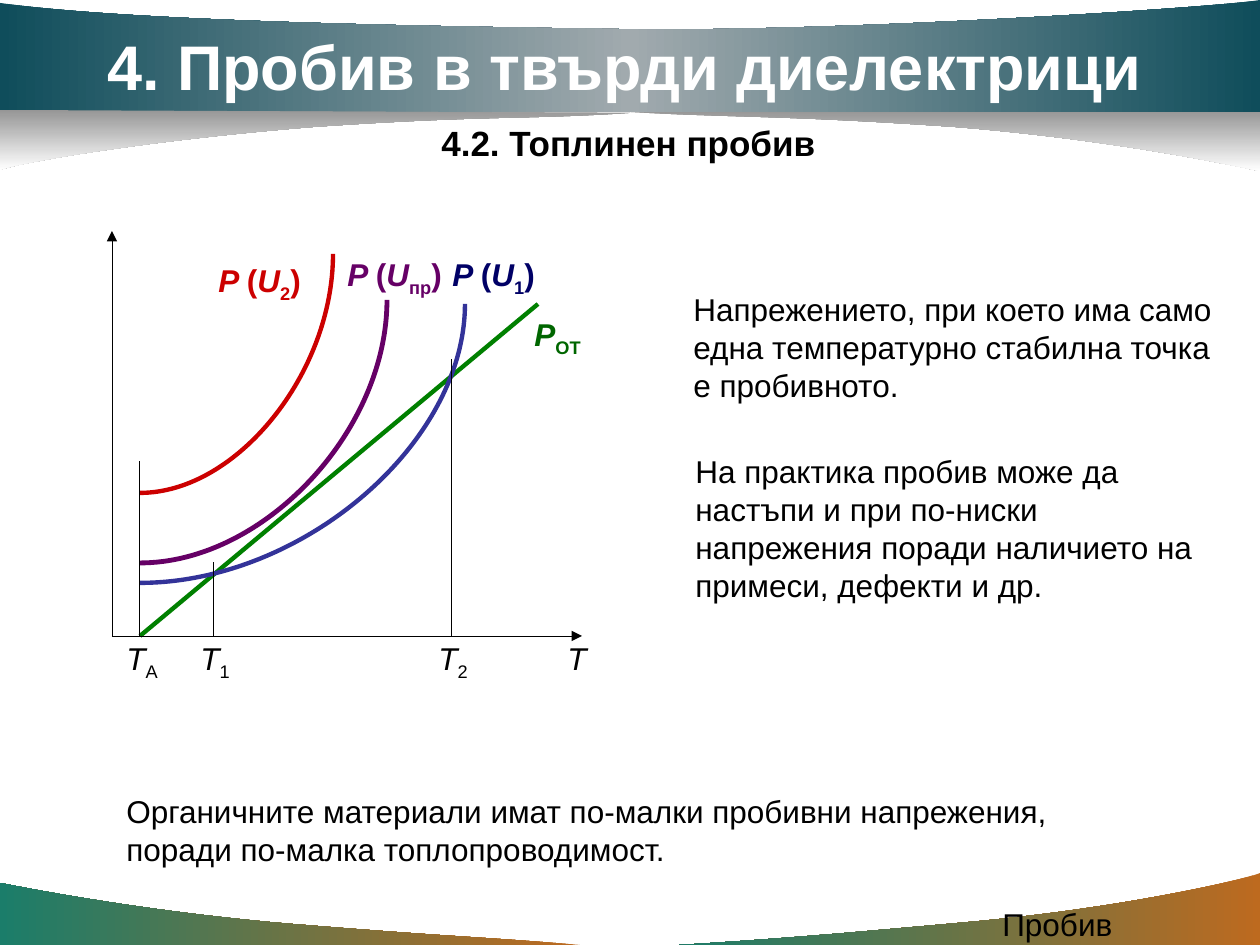
from dataclasses import dataclass

from pptx import Presentation
from pptx.dml.color import RGBColor
from pptx.enum.shapes import MSO_CONNECTOR as Link
from pptx.oxml.ns import qn
from pptx.oxml.xmlchemy import OxmlElement as Element
from pptx.util import Pt

EMU_PER_PX = 914400 / 126


@dataclass(frozen=True)
class Theme:
    font: str = "Arial"
    title_size: int = 36
    subtitle_size: int = 20
    body_size: int = 18
    thick: float = 2.5
    white: str = "FFFFFF"
    black: str = "000000"
    loss_line: str = "008000"
    loss_label: str = "006600"
    red: str = "CC0000"
    purple: str = "660066"
    blue_curve: str = "333399"
    blue_label: str = "000066"
    footer: tuple = ((0, "BD6A1F"), (100, "1B7D6A"))
    shade: tuple = ((0, "969696"), (100, "FFFFFF"))
    header: tuple = ((0, "0F4D5B"), (50, "A1AAAE"), (100, "0F4D5B"))


def px(length):
    return round(length * EMU_PER_PX)


def add_child(parent, tag, **attributes):
    child = Element(tag)
    for name, value in attributes.items():
        child.set(name, str(value))
    parent.append(child)
    return child


class SlideBuilder:
    def __init__(self, slide, theme):
        self.slide, self.theme = slide, theme

    def band(self, start, steps, stops, angle):
        """Filled outline: a pair is a straight step, six numbers are a curve."""
        corners = [start] + [step[-2:] for step in steps]
        outline = self.slide.shapes.build_freeform(*start, scale=EMU_PER_PX)
        outline.add_line_segments(corners[1:], close=True)
        shape = outline.convert_to_shape()
        shape.shadow.inherit = False
        shape.line.fill.background()
        properties = shape._element.spPr

        # Bend the curved steps
        left, top = (min(axis) for axis in zip(*corners))
        for segment, step in zip(list(properties.iter(qn("a:lnTo"))), steps):
            if len(step) == 6:
                curve = Element("a:cubicBezTo")
                for x, y in zip(step[::2], step[1::2]):
                    add_child(curve, "a:pt", x=x - left, y=y - top)
                segment.getparent().replace(segment, curve)

        # Gradient
        shape.fill.gradient()
        shape.fill.gradient_angle = angle
        stop_list = properties.find(".//" + qn("a:gsLst"))
        stop_list.clear()
        for position, color in stops:
            stop = add_child(stop_list, "a:gs", pos=position * 1000)
            add_child(stop, "a:srgbClr", val=color)

    def line(self, start, end, color=None, width=None, arrow=False, curved=False):
        """Without a width the line is a hairline."""
        kind = Link.CURVE if curved else Link.STRAIGHT
        link = self.slide.shapes.add_connector(kind, *map(px, (*start, *end)))
        link._element.remove(link._element.find(qn("p:style")))
        link.line.color.rgb = RGBColor.from_string(color or self.theme.black)
        if width:
            link.line.width = Pt(width)
        properties = link._element.spPr
        if curved:
            properties.find(qn("a:prstGeom")).set("prst", "curvedConnector2")
        if arrow:
            add_child(properties.find(qn("a:ln")), "a:tailEnd", type="triangle")
        add_child(properties, "a:effectLst")

    def text(self, box, runs, color=None, size=None, bold=False):
        """Runs are (text, style) pairs; style is plain, italic or sub."""
        frame = self.slide.shapes.add_textbox(*map(px, box)).text_frame
        frame.word_wrap = True
        for content, style in runs:
            run = frame.paragraphs[0].add_run()
            run.text = content
            formats = {
                "name": self.theme.font,
                "size": Pt(size or self.theme.body_size),
                "bold": bold,
                "italic": style == "italic",
            }
            for name, value in formats.items():
                setattr(run.font, name, value)
            run.font.color.rgb = RGBColor.from_string(color or self.theme.black)
            if style == "sub":
                run._r.get_or_add_rPr().set("baseline", "-25000")

    def plain(self, box, content, **style):
        self.text(box, [(content, "plain")], **style)

    def power_label(self, left, top, index, color):
        runs = [("P ", "italic"), ("(", "plain"), ("U", "italic"),
                (index, "sub"), (")", "plain")]
        self.text((left, top, 126, 50), runs, color=color, bold=True)


def main():
    theme = Theme()
    deck = Presentation()
    deck.slide_width, deck.slide_height = px(1260), px(945)
    page = SlideBuilder(deck.slides.add_slide(deck.slide_layouts[6]), theme)

    # Decorative bands
    bands = [
        ((580, 945), [(484, 937, 451, 937, 292, 924), (134, 911, 1, 883, 0, 883),
                      (0, 945)], theme.footer, 180),
        ((679, 945), [(774, 939, 814, 936, 969, 922), (1124, 908, 1247, 879, 1260, 873),
                      (1260, 945)], theme.footer, 180),
        ((630, 112), [(736, 118, 781, 115, 955, 127), (1130, 141, 1257, 171, 1260, 171),
                      (1260, 111)], theme.shade, 270),
        ((0, 112), [(1260, 112), (1260, 0), (1215, 8, 823, 33, 614, 29),
                    (404, 26, 127, 21, 0, 3)], theme.header, 180),
        ((630, 113), [(524, 120, 489, 115, 314, 127), (139, 141, 14, 164, 0, 170),
                      (0, 110)], theme.shade, 270),
    ]
    for band in bands:
        page.band(*band)

    # Footer and headings
    page.plain((990, 899, 262, 32), "Пробив")
    page.plain((95, 21, 1064, 88), "4. Пробив в твърди диелектрици",
               color=theme.white, size=theme.title_size, bold=True)
    page.plain((429, 115, 402, 54), "4.2. Топлинен пробив",
               size=theme.subtitle_size, bold=True)

    # Removed heat
    origin_x, ambient_x, base_y = 112, 140, 636
    page.line((ambient_x, base_y), (538, 304), theme.loss_line, theme.thick)
    page.text((522, 309, 105, 50), [("P", "italic"), ("ОТ", "sub")],
              color=theme.loss_label, bold=True)

    # Heat curves: start height, end point, colours, width, label place and index
    curves = [
        (493, (333, 254), theme.red, theme.red, theme.thick, (206, 255), "2"),
        (563, (387, 300), theme.purple, theme.purple, 2.75, (335, 249), "пр"),
        (583, (465, 304), theme.blue_curve, theme.blue_label, theme.thick, (440, 249), "1"),
    ]
    for start_y, end, color, label_color, width, place, index in curves:
        page.line((ambient_x, start_y), end, color, width, curved=True)
        page.power_label(*place, index, label_color)

    # Axes
    for tip in ((582, base_y), (origin_x, 231)):
        page.line((origin_x, base_y), tip, arrow=True)
    page.text((555, 633, 44, 50), [("T", "italic")])

    # Temperature marks
    marks = [(ambient_x, 462, 114, "А"), (214, 563, 188, "1"), (452, 360, 426, "2")]
    for x, top, label_left, index in marks:
        page.line((x, top), (x, base_y))
        page.text((label_left, 633, 59, 50), [("T", "italic"), (index, "sub")])

    # Explanations
    page.plain((681, 284, 548, 126),
               "Напрежението, при което има само една температурно стабилна точка "
               "е пробивното.")
    page.plain((683, 446, 548, 164),
               "На практика пробив може да настъпи и при по-ниски напрежения "
               "поради наличието на примеси, дефекти и др.")
    page.plain((114, 786, 968, 88),
               "Органичните материали имат по-малки пробивни напрежения, "
               "поради по-малка топлопроводимост.")

    deck.save("out.pptx")


if __name__ == "__main__":
    main()
